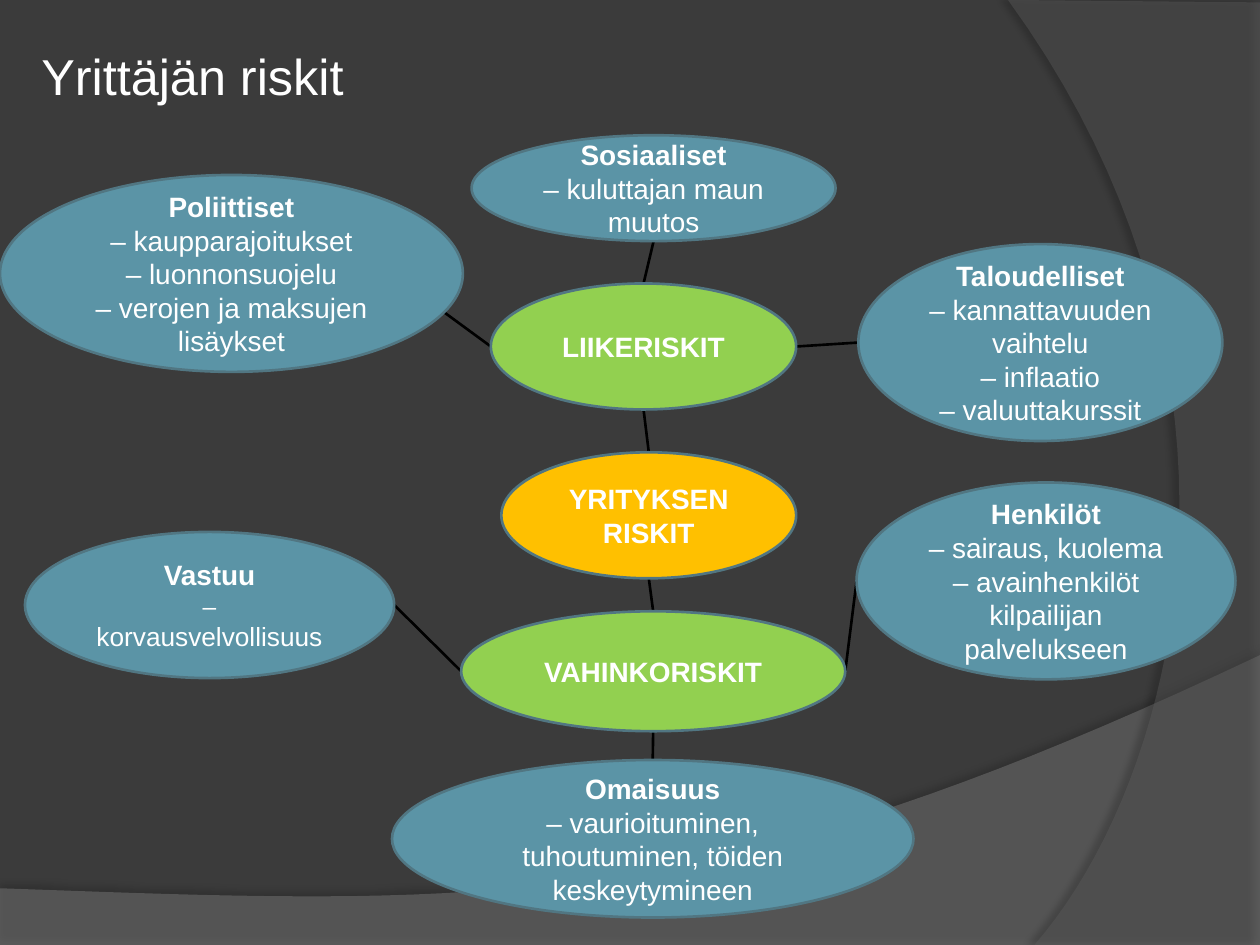
from lxml.etree import SubElement
from pptx import Presentation
from pptx.dml.color import RGBColor
from pptx.enum.shapes import MSO_CONNECTOR, MSO_SHAPE
from pptx.enum.text import MSO_ANCHOR, MSO_AUTO_SIZE, PP_ALIGN
from pptx.oxml.ns import qn
from pptx.util import Pt

COLORS = {
    "background": "3B3B3B", "wave": "7F7F7F", "arc": "5E5E5E",
    "text": "FFFFFF", "link": "000000", "outline": "517682",
    "core": "FFC000", "group": "92D050", "risk": "5B94A6",
}
COLORS = {part: RGBColor.from_string(value) for part, value in COLORS.items()}


def add_backdrop(slide, corners, curve, color, alpha, shadow):
    a, b, c, d = curve
    steps = [i / 40 for i in range(41)]
    bend = [
        tuple((1 - t) ** 3 * p + 3 * (1 - t) ** 2 * t * q + 3 * (1 - t) * t ** 2 * r + t ** 3 * s
              for p, q, r, s in zip(a, b, c, d))
        for t in steps
    ]
    outline = [(Pt(x), Pt(y)) for x, y in corners + bend]
    builder = slide.shapes.build_freeform(*outline[0])
    builder.add_line_segments(outline[1:], close=True)
    backdrop = builder.convert_to_shape()
    backdrop.fill.solid()
    backdrop.fill.fore_color.rgb = COLORS[color]
    backdrop.line.fill.background()
    backdrop.shadow.inherit = False
    properties = backdrop.element.spPr
    fill_color = properties.find(qn("a:solidFill"))[0]
    SubElement(fill_color, qn("a:alpha"), val=str(alpha * 1000))
    opacity, blur, distance, angle = shadow
    outer = SubElement(properties.find(qn("a:effectLst")), qn("a:outerShdw"),
                       blurRad=str(Pt(blur)), dist=str(Pt(distance)),
                       dir=str(angle * 60000), algn="ctr", rotWithShape="0")
    shade = SubElement(outer, qn("a:srgbClr"), val="000000")
    SubElement(shade, qn("a:alpha"), val=str(opacity * 1000))


def write_run(paragraph, text, size, bold):
    run = paragraph.add_run()
    run.text = text
    run.font.color.rgb = COLORS["text"]
    for key, value in {"name": "Arial", "size": Pt(size), "bold": bold}.items():
        setattr(run.font, key, value)


presentation = Presentation()
presentation.slide_width, presentation.slide_height = Pt(720), Pt(540)
slide = presentation.slides.add_slide(presentation.slide_layouts[5])
slide.background.fill.solid()
slide.background.fill.fore_color.rgb = COLORS["background"]

add_backdrop(slide, [(0, 540), (720, 540)],
             [(720, 374.4), (402.5, 524.9), (281.5, 517.7), (0, 507.6)],
             "wave", 45, (35, 4, 3.5, 270))
add_backdrop(slide, [(720, 1.4), (720, 540)],
             [(591.1, 540), (673.2, 445.7), (733, 216), (576, 0)],
             "arc", 40, (45, 4, 4, 180))

title = slide.shapes.title
title_place = {"left": 20, "top": 21, "width": 518, "height": 44.5}
for key, value in title_place.items():
    setattr(title, key, Pt(value))
title_format = {"vertical_anchor": MSO_ANCHOR.MIDDLE, "auto_size": MSO_AUTO_SIZE.NONE}
title_format |= {f"margin_{side}": Pt(3.6) for side in ("left", "top", "right", "bottom")}
for key, value in title_format.items():
    setattr(title.text_frame, key, value)
title_line = title.text_frame.paragraphs[0]
title_line.alignment = PP_ALIGN.LEFT
write_run(title_line, "Yrittäjän riskit", 28.8, False)

risks = {
    "YRITYKSEN RISKIT": ("core", (286.5, 258.5, 168.5, 72), []),
    "LIIKERISKIT": ("group", (280.5, 162, 174.5, 72), []),
    "Taloudelliset": ("risk", (490.5, 139.5, 208, 112.5), [
        ["– kannattavuuden vaihtelu"], ["– inflaatio"], ["– valuuttakurssit"]]),
    "Sosiaaliset": ("risk", (269.5, 77.3, 208, 60.5), [["– kuluttajan maun muutos"]]),
    "Poliittiset": ("risk", (0, 100, 264.5, 112.5), [
        ["– kaupparajoitukset"], ["– luonnonsuojelu"], ["– verojen ja maksujen lisäykset"]]),
    "VAHINKORISKIT": ("group", (263.5, 349.3, 219.5, 68.5), []),
    "Henkilöt": ("risk", (489.5, 275.7, 216.5, 112.5), [
        ["– sairaus, kuolema"], ["– avainhenkilöt kilpailijan palvelukseen"]]),
    "Omaisuus": ("risk", (224, 434.3, 298, 90), [
        ["– vaurioituminen, tuhoutuminen, töiden keskeytymineen"]]),
    "Vastuu": ("risk", (14.3, 304, 211, 83.5), [["– ", "korvausvelvollisuus"]]),
}
special_sizes = {"– ": 14, "korvausvelvollisuus": 15}

anchors = {"top": (0.5, 0), "bottom": (0.5, 1), "left": (0, 0.5), "right": (1, 0.5),
           "lower right": (0.935, 0.655)}
links = [
    ("Poliittiset", "lower right", "LIIKERISKIT", "left"),
    ("LIIKERISKIT", "right", "Taloudelliset", "left"),
    ("LIIKERISKIT", "top", "Sosiaaliset", "bottom"),
    ("YRITYKSEN RISKIT", "top", "LIIKERISKIT", "bottom"),
    ("Omaisuus", "top", "VAHINKORISKIT", "bottom"),
    ("VAHINKORISKIT", "left", "Vastuu", "right"),
    ("VAHINKORISKIT", "right", "Henkilöt", "left"),
    ("YRITYKSEN RISKIT", "bottom", "VAHINKORISKIT", "top"),
]
for start, start_side, end, end_side in links:
    ends = []
    for risk, side in ((start, start_side), (end, end_side)):
        left, top, width, height = risks[risk][1]
        across, down = anchors[side]
        ends += [Pt(left + across * width), Pt(top + down * height)]
    link = slide.shapes.add_connector(MSO_CONNECTOR.STRAIGHT, *ends)
    link.line.color.rgb = COLORS["link"]
    link.line.width = Pt(1.5)
    SubElement(link.element.spPr, qn("a:effectLst"))

for heading, (level, place, details) in risks.items():
    bubble = slide.shapes.add_shape(MSO_SHAPE.OVAL, *map(Pt, place))
    bubble.shadow.inherit = False
    bubble.fill.solid()
    bubble.fill.fore_color.rgb = COLORS[level]
    bubble.line.color.rgb = COLORS["outline"]
    bubble.line.width = Pt(1.5)
    content = bubble.text_frame
    for key, value in {"word_wrap": True, "vertical_anchor": MSO_ANCHOR.MIDDLE}.items():
        setattr(content, key, value)
    for index, pieces in enumerate([[heading]] + details):
        line = content.add_paragraph() if index else content.paragraphs[0]
        line.alignment = PP_ALIGN.CENTER
        for piece in pieces:
            write_run(line, piece, special_sizes.get(piece, 16), index == 0)

presentation.save("out.pptx")
